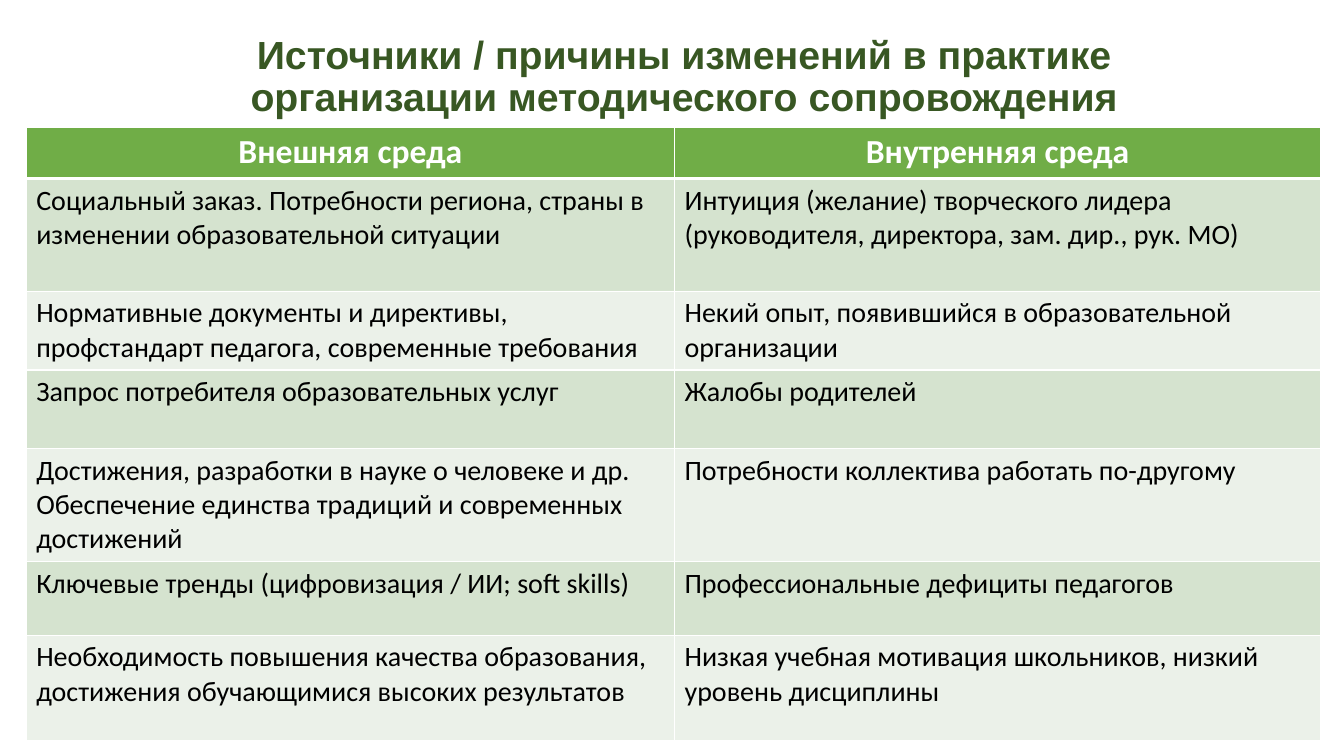
from dataclasses import dataclass

from lxml import etree
from pptx import Presentation
from pptx.dml.color import RGBColor
from pptx.enum.text import MSO_ANCHOR, MSO_AUTO_SIZE, PP_ALIGN
from pptx.oxml.ns import qn
from pptx.util import Inches, Pt

LEFT, CENTER = PP_ALIGN.LEFT, PP_ALIGN.CENTER
TOP = MSO_ANCHOR.TOP
NO_FIT = MSO_AUTO_SIZE.NONE
TITLE_ONLY = 5


@dataclass(frozen=True)
class Theme:
    title_font: str = "Arial"
    body_font: str = "Calibri"
    title: str = "385723"
    header: str = "70AD47"
    bands: tuple = ("D5E3CF", "EBF1E9")
    white: str = "FFFFFF"
    black: str = "000000"
    title_size: int = 28
    header_size: int = 24
    body_size: int = 20


THEME = Theme()

TITLE = "Источники / причины изменений в практике организации методического сопровождения"
HEADERS = ("Внешняя среда", "Внутренняя среда")
# Row height in inches, external source, internal source
SOURCES = [
    (1.12, "Социальный заказ. Потребности региона, страны в изменении образовательной ситуации",
     "Интуиция (желание) творческого лидера (руководителя, директора, зам. дир., рук. МО)"),
    (0.78, "Нормативные документы и директивы, профстандарт педагога, современные требования",
     "Некий опыт, появившийся в образовательной организации"),
    (0.78, "Запрос потребителя образовательных услуг", "Жалобы родителей"),
    (1.12, "Достижения, разработки в науке о человеке и др. "
           "Обеспечение единства традиций и современных достижений",
     "Потребности коллектива работать по-другому"),
    (0.73, "Ключевые тренды (цифровизация / ИИ; soft skills)",
     "Профессиональные дефициты педагогов"),
    (1.05, "Необходимость повышения качества образования, достижения обучающимися высоких результатов",
     "Низкая учебная мотивация школьников, низкий уровень дисциплины"),
]
HEADER_HEIGHT = 0.51
COLUMN_WIDTHS = (6.43, 6.41)


def write(tf, text, size, color, font=THEME.body_font, bold=False, align=LEFT, spacing=1.0):
    p = tf.paragraphs[0]
    p.alignment, p.line_spacing = align, spacing
    r = p.add_run()
    r.text = text
    r.font.name, r.font.size, r.font.bold = font, Pt(size), bold
    r.font.color.rgb = RGBColor.from_string(color)


def set_borders(cell, color, bottom=1):
    tcPr = cell._tc.get_or_add_tcPr()
    widths = {"a:lnL": 1, "a:lnR": 1, "a:lnT": 1, "a:lnB": bottom}
    # Border lines come before the fill in cell properties
    for i, (tag, width) in enumerate(widths.items()):
        ln = etree.Element(qn(tag), w=str(Pt(width)))
        fill = etree.SubElement(ln, qn("a:solidFill"))
        etree.SubElement(fill, qn("a:srgbClr"), val=color)
        tcPr.insert(i, ln)


def fill_cell(cell, text, fill, bottom=1, **fmt):
    cell.fill.solid()
    cell.fill.fore_color.rgb = RGBColor.from_string(fill)
    set_borders(cell, THEME.white, bottom)
    write(cell.text_frame, text, **fmt)


def add_title(s):
    sp = s.shapes.title
    sp.left, sp.top = Inches(1.47), Inches(0.3)
    sp.width, sp.height = Inches(10.63), Inches(1.31)
    tf = sp.text_frame
    tf.word_wrap, tf.auto_size, tf.vertical_anchor = True, NO_FIT, TOP
    write(tf, TITLE, THEME.title_size, THEME.title, font=THEME.title_font,
          bold=True, align=CENTER, spacing=0.9)


def add_sources_table(s):
    heights = [HEADER_HEIGHT] + [height for height, *_ in SOURCES]
    table = s.shapes.add_table(len(heights), len(COLUMN_WIDTHS), Inches(0.26), Inches(1.26),
                               Inches(sum(COLUMN_WIDTHS)), Inches(sum(heights))).table
    for column, width in zip(table.columns, COLUMN_WIDTHS):
        column.width = Inches(width)
    for row, height in zip(table.rows, heights):
        row.height = Inches(height)

    # Header row
    for col, text in enumerate(HEADERS):
        fill_cell(table.cell(0, col), text, THEME.header, bottom=3, size=THEME.header_size,
                  color=THEME.white, bold=True, align=CENTER)

    # Banded rows
    for row, (_, *texts) in enumerate(SOURCES, start=1):
        band = THEME.bands[(row - 1) % 2]
        for col, text in enumerate(texts):
            fill_cell(table.cell(row, col), text, band, size=THEME.body_size, color=THEME.black)


def main():
    prs = Presentation()
    prs.slide_width, prs.slide_height = Inches(13.33), Inches(7.5)
    s = prs.slides.add_slide(prs.slide_layouts[TITLE_ONLY])
    add_title(s)
    add_sources_table(s)
    prs.save("out.pptx")


if __name__ == "__main__":
    main()
